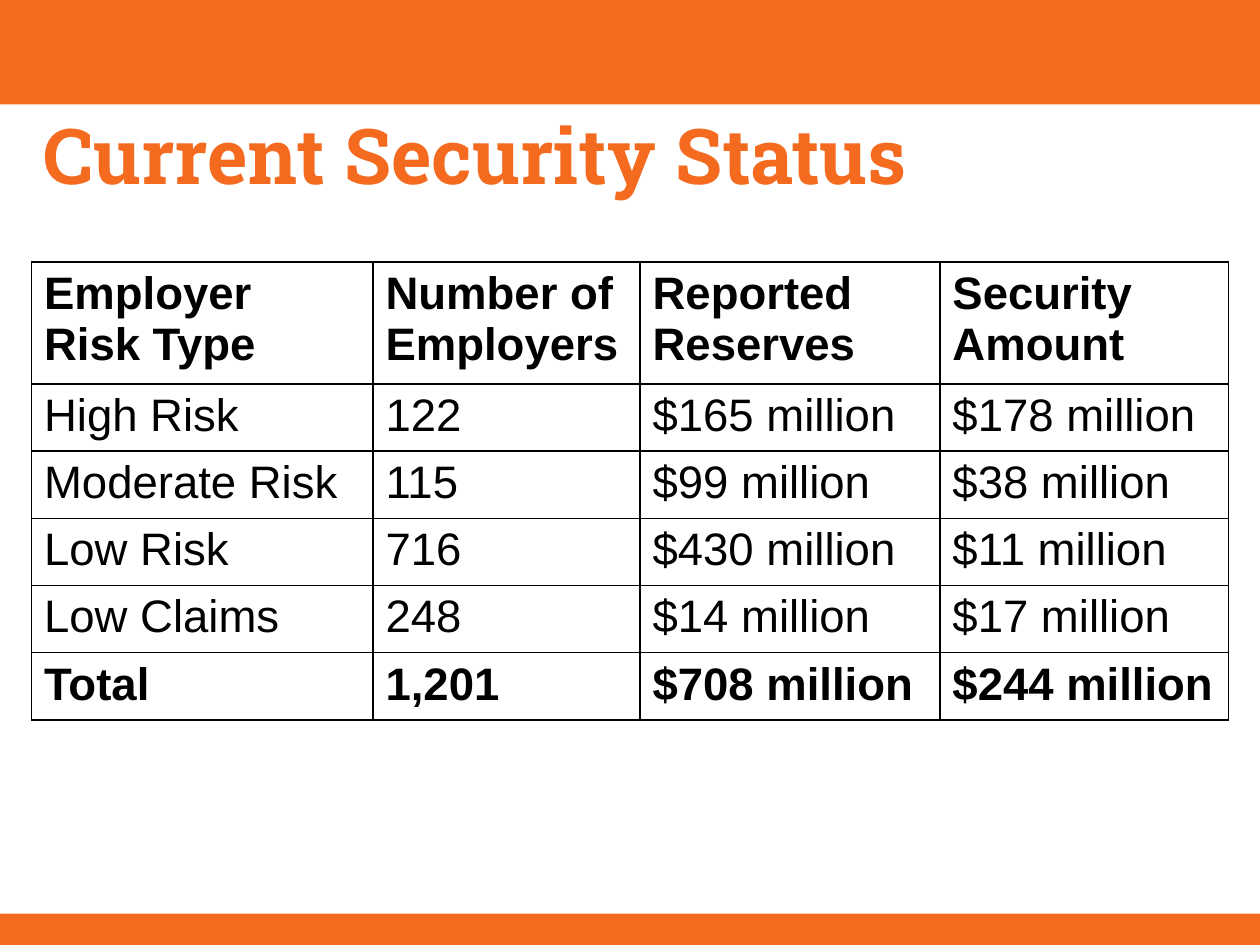
from dataclasses import dataclass

import pptx
import pptx.dml.color
import pptx.enum.shapes
import pptx.enum.text
import pptx.oxml
import pptx.oxml.ns
import pptx.util
from pptx.util import Inches


@dataclass(frozen=True)
class Theme:
    orange: str = "F46A1F"
    black: str = "000000"
    title_font: str = "Roboto Slab"
    body_font: str = "Arial"
    title_size: int = 44
    title_line: int = 42
    table_size: int = 26
    border_width: int = 1


@dataclass(frozen=True)
class Band:
    top: float
    height: float


THEME = Theme()
PAGE_WIDTH, PAGE_HEIGHT = 10, 7.5
BANDS = [Band(0, 0.83), Band(7.25, 0.25)]
COLUMN_WIDTHS = [2.71, 2.12, 2.38, 2.29]
ROW_HEIGHT = 0.41  # rows grow to fit their text
ROWS = [
    ("Employer Risk Type", "Number of Employers", "Reported Reserves", "Security Amount"),
    ("High Risk", "122", "$165 million", "$178 million"),
    ("Moderate Risk", "115", "$99 million", "$38 million"),
    ("Low Risk", "716", "$430 million", "$11 million"),
    ("Low Claims", "248", "$14 million", "$17 million"),
    ("Total", "1,201", "$708 million", "$244 million"),
]


def style_text(para, font_name: str, size: int, color: str, bold: bool) -> None:
    for span in para.runs:
        span.font.name = font_name
        span.font.size = pptx.util.Pt(size)
        span.font.bold = bold
        span.font.color.rgb = pptx.dml.color.RGBColor.from_string(color)


def draw_band(page, band: Band) -> None:
    shape = page.shapes.add_shape(
        pptx.enum.shapes.MSO_SHAPE.RECTANGLE,
        Inches(0), Inches(band.top), Inches(PAGE_WIDTH), Inches(band.height))
    shape.shadow.inherit = False
    shape.fill.solid()
    shape.fill.fore_color.rgb = pptx.dml.color.RGBColor.from_string(THEME.orange)
    shape.line.fill.background()


def draw_title(page, text: str) -> None:
    box = page.shapes.add_textbox(Inches(0.25), Inches(0.92), Inches(9), Inches(0.75))
    frame = box.text_frame
    frame.word_wrap = True
    frame.vertical_anchor = pptx.enum.text.MSO_ANCHOR.MIDDLE
    frame.text = text
    para = frame.paragraphs[0]
    para.line_spacing = pptx.util.Pt(THEME.title_line)
    style_text(para, THEME.title_font, THEME.title_size, THEME.orange, True)


def add_borders(cell) -> None:
    properties = cell._tc.get_or_add_tcPr()
    width = pptx.util.Pt(THEME.border_width)
    for side in "LRTB":
        properties.append(pptx.oxml.parse_xml(
            f'<a:ln{side} {pptx.oxml.ns.nsdecls("a")} w="{width}"><a:solidFill>'
            f'<a:srgbClr val="{THEME.black}"/></a:solidFill></a:ln{side}>'))


def draw_table(page) -> None:
    table = page.shapes.add_table(
        len(ROWS), len(COLUMN_WIDTHS), Inches(0.25), Inches(2.08),
        Inches(sum(COLUMN_WIDTHS)), Inches(ROW_HEIGHT * len(ROWS))).table
    table.first_row = False
    table.horz_banding = False
    for column, width in zip(table.columns, COLUMN_WIDTHS):
        column.width = Inches(width)
    for index, values in enumerate(ROWS):
        table.rows[index].height = Inches(ROW_HEIGHT)
        bold = index in (0, len(ROWS) - 1)  # header and total
        for cell, value in zip(table.rows[index].cells, values):
            add_borders(cell)
            cell.fill.background()
            cell.text_frame.text = value
            style_text(cell.text_frame.paragraphs[0], THEME.body_font,
                       THEME.table_size, THEME.black, bold)


def main() -> None:
    deck = pptx.Presentation()
    deck.slide_width, deck.slide_height = Inches(PAGE_WIDTH), Inches(PAGE_HEIGHT)
    page = deck.slides.add_slide(deck.slide_layouts[6])

    # Top and bottom bands
    for band in BANDS:
        draw_band(page, band)

    # Title and risk table
    draw_title(page, "Current Security Status")
    draw_table(page)

    deck.save("out.pptx")


if __name__ == "__main__":
    main()
